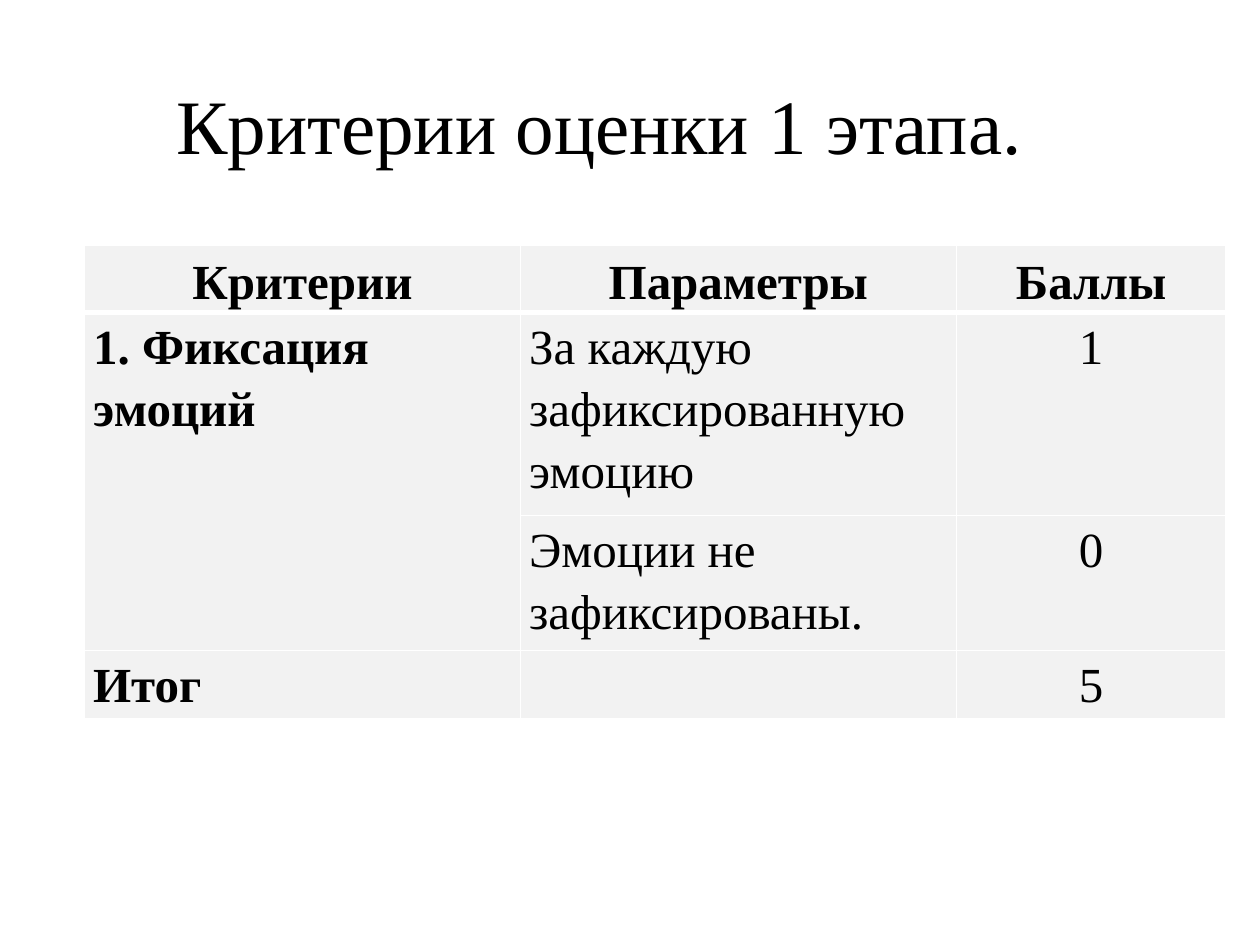
from lxml.etree import SubElement
from pptx import Presentation
from pptx.dml.color import RGBColor
from pptx.enum.text import MSO_ANCHOR as Anchor, PP_ALIGN as Align
from pptx.oxml.ns import qn
from pptx.util import Inches, Pt

WIDTH, HEIGHT = Inches(10), Inches(7.5)
COLORS = {"background": "FFFFFF", "cell": "F2F2F2", "border": "FFFFFF", "text": "000000"}
FONT = "Times New Roman"
TITLE_BOX = (0.051, 0.069, 0.85, 0.215)
TABLE_BOX = (0.067, 0.259, 0.906, 0.388)
COLUMN_WIDTHS = (3.46, 3.46, 2.14)
ROW_HEIGHTS = (0.42, 1, 1, 0.49)
ROWS = (
    ("Критерии", "Параметры", "Баллы"),
    ("1. Фиксация эмоций", "За каждую зафиксированную эмоцию", "1"),
    ("", "Эмоции не зафиксированы.", "0"),
    ("Итог", "", "5"),
)


def place(box):
    """Turn shares of the slide into lengths."""
    return [round(share * side) for share, side in zip(box, (WIDTH, HEIGHT) * 2)]


def apply_format(target, values):
    """Set each attribute named in the dict."""
    for name, value in values.items():
        setattr(target, name, value)


def write_text(paragraph, text, size, bold, paragraph_format):
    """Write one formatted run into a paragraph."""
    apply_format(paragraph, paragraph_format)
    run = paragraph.add_run()
    run.text = text
    apply_format(run.font, {"name": FONT, "size": Pt(size), "bold": bold})
    run.font.color.rgb = RGBColor.from_string(COLORS["text"])


def set_borders(cell, widths):
    """Draw the four cell borders with widths in points."""
    properties = cell._tc.get_or_add_tcPr()
    for index, (side, width) in enumerate(widths.items()):
        line = SubElement(properties, qn(f"a:ln{side}"), w=str(Pt(width)))
        fill = SubElement(line, qn("a:solidFill"))
        SubElement(fill, qn("a:srgbClr"), val=COLORS["border"])
        properties.insert(index, line)


def add_title(slide, box):
    """Place the slide title at the top of its box."""
    frame = slide.shapes.add_textbox(*place(box)).text_frame
    apply_format(frame, {"word_wrap": True, "vertical_anchor": Anchor.TOP,
                         "margin_top": Inches(0.1)})
    write_text(frame.paragraphs[0], "Критерии оценки 1 этапа.", 44, False,
               {"alignment": Align.CENTER})


def format_cell(cell, text, row, column):
    """Fill, frame and write one cell by its role in the table."""
    header = row == 0
    apply_format(cell, {"margin_left": Inches(0.07), "margin_right": Inches(0.07),
                        "margin_top": 0, "margin_bottom": 0,
                        "vertical_anchor": Anchor.MIDDLE if header else Anchor.TOP})
    cell.fill.solid()
    cell.fill.fore_color.rgb = RGBColor.from_string(COLORS["cell"])
    set_borders(cell, {"L": 1, "R": 1, "T": 3 if row == 1 else 1, "B": 3 if header else 1})
    if text:
        centred = header or column == 2
        write_text(cell.text_frame.paragraphs[0], text, 28, header or column == 0,
                   {"alignment": Align.CENTER if centred else Align.LEFT,
                    "line_spacing": 1.15})


def add_criteria_table(slide, box):
    """Place the table of criteria, parameters and points."""
    table = slide.shapes.add_table(len(ROWS), len(COLUMN_WIDTHS), *place(box)).table
    for column, width in zip(table.columns, COLUMN_WIDTHS):
        column.width = Inches(width)
    for row, height in zip(table.rows, ROW_HEIGHTS):
        row.height = Inches(height)
    for row, texts in enumerate(ROWS):
        for column, text in enumerate(texts):
            format_cell(table.cell(row, column), text, row, column)
    table.cell(1, 0).merge(table.cell(2, 0))


def main():
    """Build and save the slide."""
    presentation = Presentation()
    apply_format(presentation, {"slide_width": WIDTH, "slide_height": HEIGHT})
    slide = presentation.slides.add_slide(presentation.slide_layouts[6])
    slide.background.fill.solid()
    slide.background.fill.fore_color.rgb = RGBColor.from_string(COLORS["background"])
    add_title(slide, TITLE_BOX)
    add_criteria_table(slide, TABLE_BOX)
    presentation.save("out.pptx")


if __name__ == "__main__":
    main()
